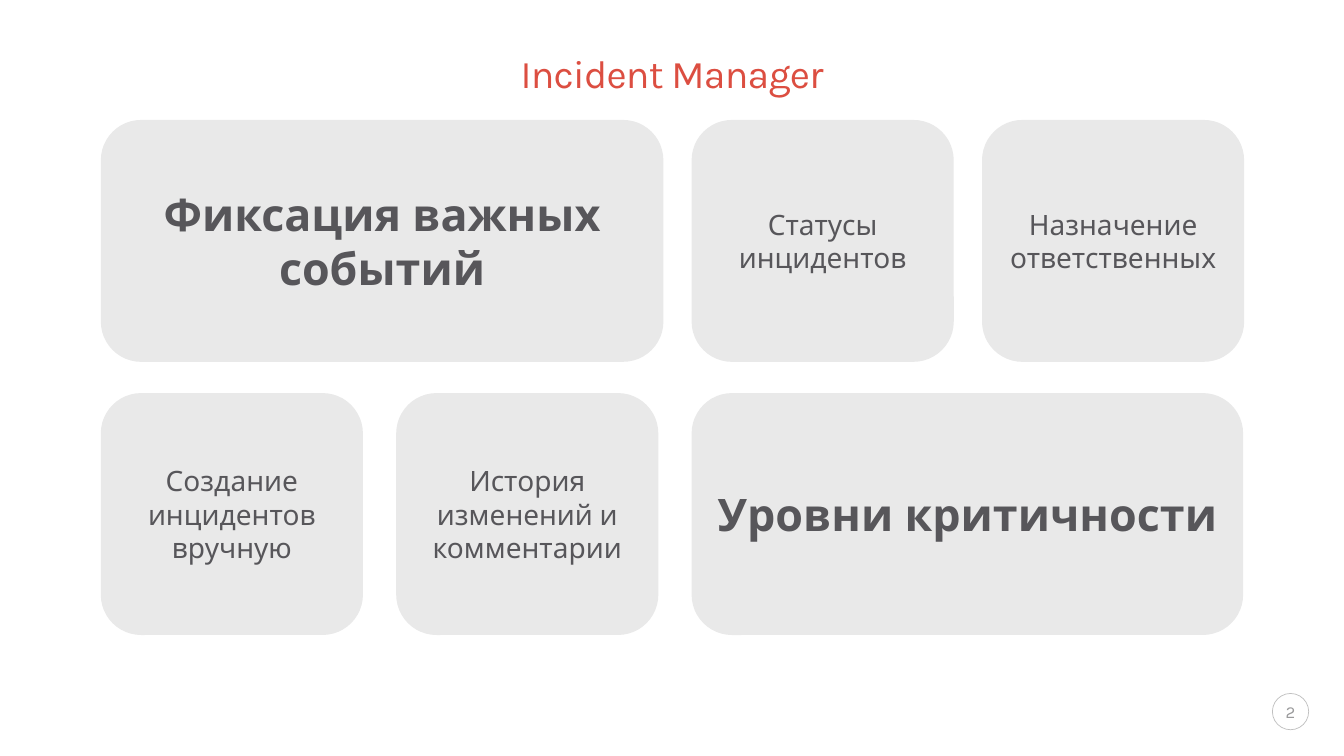
from pptx import Presentation
from pptx.dml.color import RGBColor
from pptx.enum.shapes import MSO_SHAPE
from pptx.enum.text import MSO_ANCHOR, MSO_AUTO_SIZE, PP_ALIGN
from pptx.util import Inches, Pt

ROUNDED = MSO_SHAPE.ROUNDED_RECTANGLE
OVAL = MSO_SHAPE.OVAL
MIDDLE = MSO_ANCHOR.MIDDLE
CENTER = PP_ALIGN.CENTER
NO_AUTOFIT = MSO_AUTO_SIZE.NONE

RED = RGBColor(0xDC, 0x4E, 0x41)
DARK_GRAY = RGBColor(0x57, 0x56, 0x5A)
CARD_GRAY = RGBColor(0xE9, 0xE9, 0xE9)
NUMBER_GRAY = RGBColor(0x9A, 0x9A, 0x9B)
RING_GRAY = RGBColor(0xBF, 0xBF, 0xBF)
FONT = "Karla"

TITLE = "Incident Manager"
PAGE_NUMBER = "2"
SMALL_WIDTH = 2.6
CARD_HEIGHT = 2.4
ROWS = [
    (1.19, [
        ("Фиксация важных событий", 1, 5.58, True),
        ("Статусы инцидентов", 6.86, SMALL_WIDTH, False),
        ("Назначение ответственных", 9.74, SMALL_WIDTH, False),
    ]),
    (3.9, [
        ("Создание инцидентов вручную", 1, SMALL_WIDTH, False),
        ("История изменений и комментарии", 3.93, SMALL_WIDTH, False),
        ("Уровни критичности", 6.86, 5.47, True),
    ]),
]


def write(shape, text, size, color, bold=False):
    frame = shape.text_frame
    frame.text = text
    frame.word_wrap = True
    frame.vertical_anchor = MIDDLE
    para = frame.paragraphs[0]
    para.alignment = CENTER
    span = para.runs[0]
    span.font.name = FONT
    span.font.size = Pt(size)
    span.font.bold = bold
    span.font.color.rgb = color
    return para


def clear_margins(frame):
    frame.margin_left = frame.margin_right = 0
    frame.margin_top = frame.margin_bottom = 0


def place(shape, left, top, width, height):
    shape.left, shape.top = Inches(left), Inches(top)
    shape.width, shape.height = Inches(width), Inches(height)


def add_title(page):
    title = page.shapes.title
    place(title, 1, 0.31, 11.33, 0.89)
    para = write(title, TITLE, 28, RED)
    para.line_spacing = 0.86
    para.runs[0]._r.get_or_add_rPr().set("spc", "-50")
    title.text_frame.auto_size = NO_AUTOFIT
    clear_margins(title.text_frame)


def add_card(page, text, left, top, width, large):
    card = page.shapes.add_shape(
        ROUNDED, Inches(left), Inches(top), Inches(width), Inches(CARD_HEIGHT))
    card.shadow.inherit = False
    card.fill.solid()
    card.fill.fore_color.rgb = CARD_GRAY
    card.line.fill.background()
    write(card, text, 32 if large else 20, DARK_GRAY, large)


def add_page_number(page):
    ring = page.shapes.add_shape(
        OVAL, Inches(12.62), Inches(6.88), Inches(0.36), Inches(0.36))
    ring.shadow.inherit = False
    ring.fill.background()
    ring.line.color.rgb = RING_GRAY
    ring.line.width = Pt(0.5)
    write(ring, PAGE_NUMBER, 12, NUMBER_GRAY)
    clear_margins(ring.text_frame)


def main():
    deck = Presentation()
    deck.slide_width, deck.slide_height = Inches(13.33), Inches(7.5)
    page = deck.slides.add_slide(deck.slide_layouts[5])
    add_title(page)
    for top, cards in ROWS:
        for text, left, width, large in cards:
            add_card(page, text, left, top, width, large)
    add_page_number(page)
    deck.save("out.pptx")


if __name__ == "__main__":
    main()
